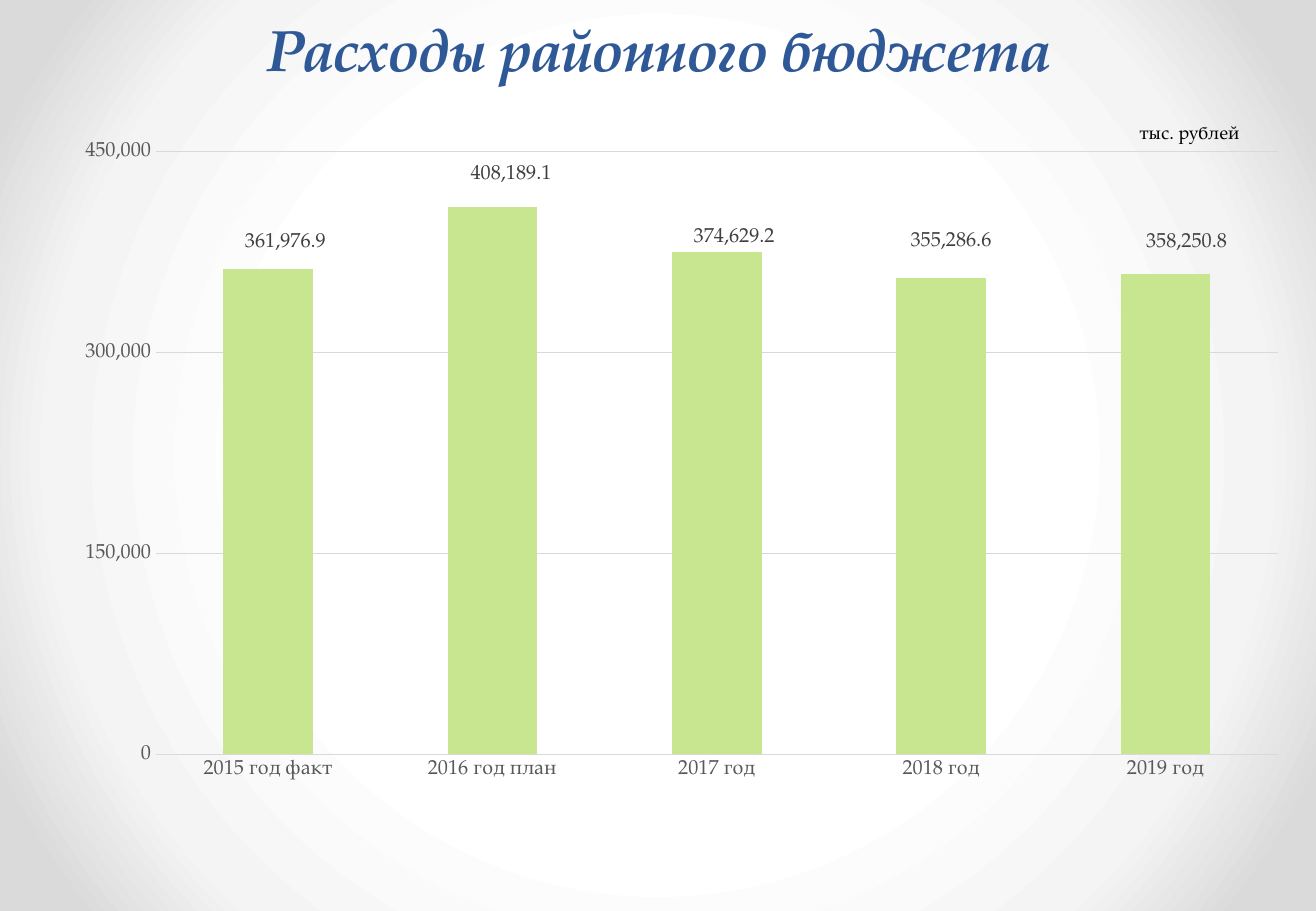
import pptx
import pptx.chart.data
import pptx.dml.color
import pptx.enum.chart
import pptx.enum.text
import pptx.oxml
import pptx.oxml.ns
import pptx.util

Inches = pptx.util.Inches
RGBColor = pptx.dml.color.RGBColor
Align = pptx.enum.text.PP_ALIGN
Anchor = pptx.enum.text.MSO_ANCHOR

FONT = "TeX Gyre Pagella"
BLUE = RGBColor(0x2F, 0x58, 0x97)
GREEN = RGBColor(0xC7, 0xE6, 0x8F)
BLACK = RGBColor(0, 0, 0)
LABEL_GRAY = RGBColor(0x40, 0x40, 0x40)
AXIS_GRAY = RGBColor(0x59, 0x59, 0x59)
GRID_GRAY = RGBColor(0xD9, 0xD9, 0xD9)
WHITE = RGBColor(0xFF, 0xFF, 0xFF)
PALE_GRAY = RGBColor(0xF4, 0xF4, 0xF4)
EDGE_GRAY = RGBColor(0xDA, 0xDA, 0xDA)

EXPENSES = {
    "2015 год факт": 361976.9,
    "2016 год план": 408189.1,
    "2017 год": 374629.2,
    "2018 год": 355286.6,
    "2019 год": 358250.8,
}
LABEL_SHIFTS = [(0.014, -0.338), (0.015, -0.385), (0.014, -0.334), (0.008, -0.345), (0.017, -0.341)]
LABEL_FORMAT = "#,##0.0"
NO_LEADER_LINES = (
    f"<c:extLst {pptx.oxml.ns.nsdecls('c')}>"
    '<c:ext uri="{CE6537A1-D6FC-4f65-9D91-7224C49458BB}"'
    ' xmlns:c15="http://schemas.microsoft.com/office/drawing/2012/chart">'
    '<c15:showLeaderLines val="0"/></c:ext></c:extLst>'
)


def style_font(font, size, color, bold=False, italic=False):
    font.name = FONT
    font.size = pptx.util.Pt(size)
    font.color.rgb = color
    font.bold = bold
    font.italic = italic


def write_text(box, text, size, color, align=Align.LEFT, anchor=Anchor.TOP, wrap=True, **style):
    frame = box.text_frame
    frame.word_wrap = wrap
    frame.auto_size = pptx.enum.text.MSO_AUTO_SIZE.NONE
    frame.vertical_anchor = anchor
    para = frame.paragraphs[0]
    para.alignment = align
    span = para.add_run()
    span.text = text
    style_font(span.font, size, color, **style)


def chart_element(tag, **attributes):
    element = pptx.oxml.parse_xml(f"<c:{tag} {pptx.oxml.ns.nsdecls('c')}/>")
    for name, value in attributes.items():
        element.set(name, str(value))
    return element


def manual_layout(**settings):
    layout = chart_element("layout")
    manual = chart_element("manualLayout")
    for tag, value in settings.items():
        manual.append(chart_element(tag, val=value))
    layout.append(manual)
    return layout


class SlideBuilder:
    def __init__(self, page):
        self.page = page

    def background(self, stops):
        fill = self.page.background.fill
        fill.gradient()
        gradient = self.page.element.find(".//" + pptx.oxml.ns.qn("a:gradFill"))
        for child in list(gradient):
            gradient.remove(child)
        marks = "".join(
            f'<a:gs pos="{percent * 1000}"><a:srgbClr val="{color}"/></a:gs>' for percent, color in stops
        )
        parts = pptx.oxml.parse_xml(
            f"<a:gradFill {pptx.oxml.ns.nsdecls('a')}><a:gsLst>{marks}</a:gsLst>"
            '<a:path path="circle"><a:fillToRect l="50000" t="50000" r="50000" b="50000"/></a:path>'
            "</a:gradFill>"
        )
        gradient.extend(list(parts))

    def title(self, text, left, top, width, height):
        box = self.page.shapes.title
        box.left, box.top, box.width, box.height = map(Inches, (left, top, width, height))
        write_text(box, text, 34.2, BLUE, align=Align.CENTER, bold=True, italic=True)

    def note(self, text, left, top, width, height):
        box = self.page.shapes.add_textbox(*map(Inches, (left, top, width, height)))
        write_text(box, text, 11, BLACK, align=Align.RIGHT, wrap=False)

    def column_chart(self, values, left, top, width, height):
        data = pptx.chart.data.CategoryChartData(number_format=LABEL_FORMAT)
        data.categories = list(values)
        data.add_series("Расходы", list(values.values()))
        chart = self.page.shapes.add_chart(
            pptx.enum.chart.XL_CHART_TYPE.COLUMN_STACKED,
            *map(Inches, (left, top, width, height)),
            data,
        ).chart
        chart.has_legend = False
        chart.has_title = False
        style_font(chart.font, 10, BLACK)
        plot = chart.plots[0]
        plot.gap_width = 150
        plot.overlap = 100
        plot.vary_by_categories = False
        series = plot.series[0]
        series.format.fill.solid()
        series.format.fill.fore_color.rgb = GREEN
        self.axes(chart)
        self.labels(chart, series)
        area = chart.element.find(".//" + pptx.oxml.ns.qn("c:plotArea"))
        for layout in area.findall(pptx.oxml.ns.qn("c:layout")):
            area.remove(layout)
        area.insert(0, manual_layout(
            layoutTarget="inner", xMode="edge", yMode="edge", x=0.098, y=0.08, w=0.902, h=0.757
        ))

    def axes(self, chart):
        for axis in (chart.category_axis, chart.value_axis):
            axis.major_tick_mark = pptx.enum.chart.XL_TICK_MARK.NONE
            axis.minor_tick_mark = pptx.enum.chart.XL_TICK_MARK.NONE
            axis.format.line.fill.background()
            style_font(axis.tick_labels.font, 12, AXIS_GRAY)
        scale = chart.value_axis
        scale.minimum_scale = 0
        scale.maximum_scale = 450000
        scale.major_unit = 150000
        scale.tick_labels.number_format = "#,##0"
        scale.tick_labels.number_format_is_linked = False
        scale.has_major_gridlines = True
        scale.major_gridlines.format.line.color.rgb = GRID_GRAY
        scale.major_gridlines.format.line.width = pptx.util.Pt(0.75)

    def labels(self, chart, series):
        labels = series.data_labels
        labels.show_value = True
        labels.number_format = LABEL_FORMAT
        labels.number_format_is_linked = False
        style_font(labels.font, 12, LABEL_GRAY)
        for index in range(len(LABEL_SHIFTS)):
            style_font(series.points[index].data_label.font, 12, LABEL_GRAY)
        for label, (across, down) in zip(chart.element.iter(pptx.oxml.ns.qn("c:dLbl")), LABEL_SHIFTS):
            label.insert(1, manual_layout(x=across, y=down))
            label.insert(2, chart_element("numFmt", formatCode=LABEL_FORMAT, sourceLinked=0))
        for leader in chart.element.iter(pptx.oxml.ns.qn("c:showLeaderLines")):
            leader.set("val", "0")
        group = chart.element.find(".//" + pptx.oxml.ns.qn("c:dLbls"))
        group.append(pptx.oxml.parse_xml(NO_LEADER_LINES))


def main():
    deck = pptx.Presentation()
    deck.slide_width = Inches(10.83)
    deck.slide_height = Inches(7.5)
    builder = SlideBuilder(deck.slides.add_slide(deck.slide_layouts[5]))
    builder.background([(50, WHITE), (76, PALE_GRAY), (92, EDGE_GRAY)])
    builder.title("Расходы районного бюджета", 0.55, 0.06, 9.75, 1.23)
    builder.column_chart(EXPENSES, 0.28, 0.72, 10.24, 6.56)
    builder.note("тыс. рублей", 9.25, 0.95, 1.05, 0.29)
    deck.save("out.pptx")


if __name__ == "__main__":
    main()
